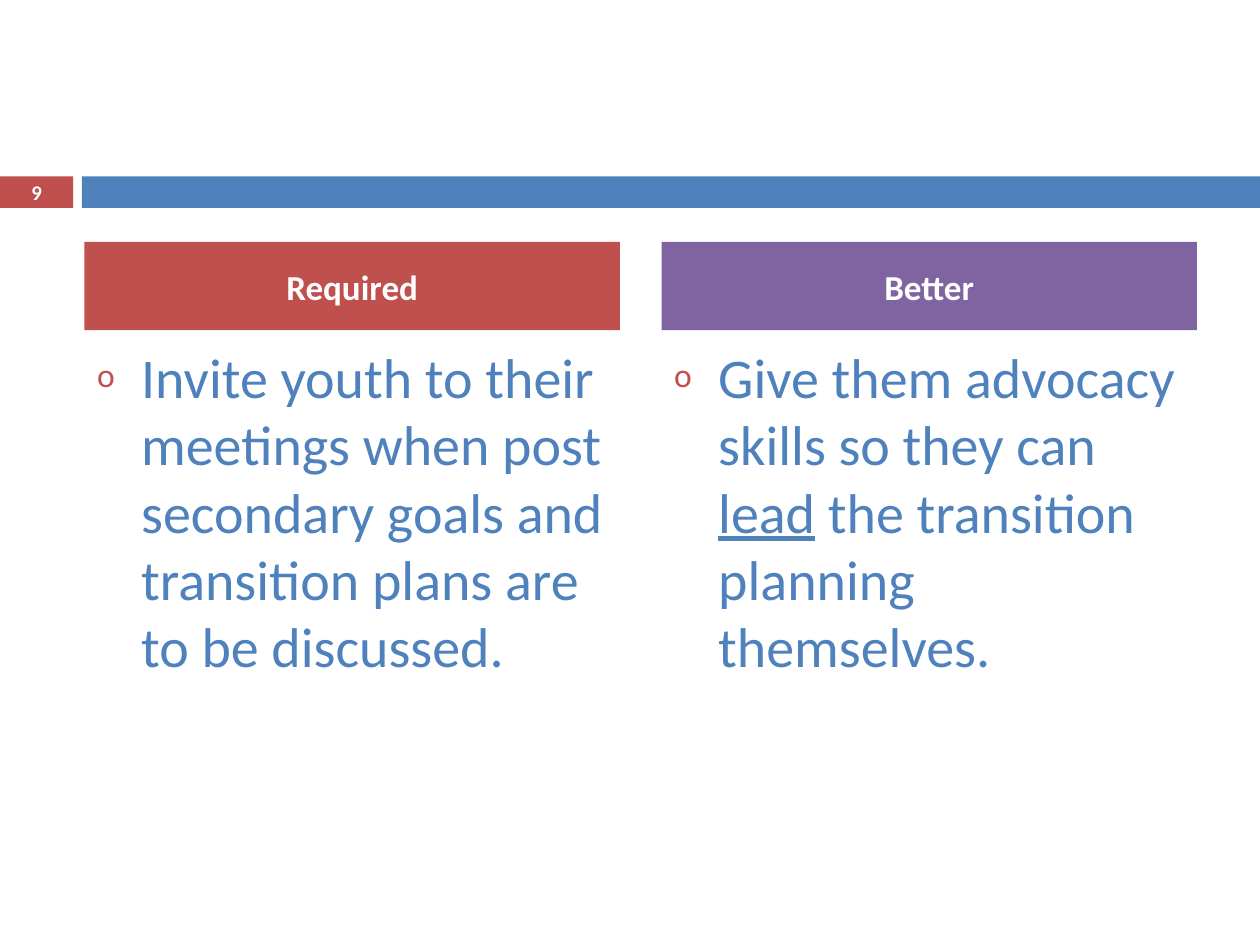
import pptx
import pptx.dml.color
import pptx.enum.shapes
import pptx.enum.text
import pptx.oxml
import pptx.oxml.ns
import pptx.util

Inches = pptx.util.Inches
Pt = pptx.util.Pt
ALIGN = pptx.enum.text.PP_ALIGN
ANCHOR = pptx.enum.text.MSO_ANCHOR

RED, BLUE, PURPLE, WHITE = "C0504D", "4F81BD", "8064A2", "FFFFFF"
SLIDE_NUMBER = "9"
COLUMNS = [
    {"heading": "Required", "fill": RED, "holders": (1, 2),
     "advice": [("Invite youth to their meetings when post secondary goals "
                 "and transition plans are to be discussed.", False)]},
    {"heading": "Better", "fill": PURPLE, "holders": (3, 4),
     "advice": [("Give them advocacy skills so they can ", False),
                ("lead", True),
                (" the transition planning themselves.", False)]},
]
BANDS = [(0, 0.58, RED), (0.65, 9.35, BLUE)]
BAND_TOP, BAND_HEIGHT = 1.4, 0.25
COLUMN_LEFT, COLUMN_STEP, COLUMN_WIDTH = 0.67, 4.58, 4.25
HEADING_TOP, HEADING_HEIGHT = 1.92, 0.7
ADVICE_TOP, ADVICE_HEIGHT = 2.67, 3.92

HEADING_FONT = {"name": "Calibri", "size": Pt(20), "bold": True}
ADVICE_FONT = {"name": "Calibri", "size": Pt(32), "bold": False}
NUMBER_FONT = {"name": "Calibri", "size": Pt(11.9), "bold": True}
CENTRED = {"alignment": ALIGN.CENTER, "space_before": Pt(7)}
BULLETED = {"alignment": ALIGN.LEFT, "space_before": Pt(7)}


def apply(target, formats):
    for attribute, value in formats.items():
        setattr(target, attribute, value)


def paint(colour_format, colour):
    colour_format.rgb = pptx.dml.color.RGBColor.from_string(colour)


def fill(shape, colour):
    shape.fill.solid()
    paint(shape.fill.fore_color, colour)


def place(shape, left, top, width, height):
    apply(shape, {"left": Inches(left), "top": Inches(top),
                  "width": Inches(width), "height": Inches(height)})


def write(shape, runs, font, colour, layout, anchor):
    apply(shape.text_frame, {"word_wrap": True, "vertical_anchor": anchor,
                             "auto_size": pptx.enum.text.MSO_AUTO_SIZE.NONE})
    paragraph = shape.text_frame.paragraphs[0]
    apply(paragraph, layout)
    for words, underline in runs:
        run = paragraph.add_run()
        run.text = words
        apply(run.font, font)
        if underline:
            run.font.underline = True
        paint(run.font.color, colour)
    return paragraph


def add_bullet(paragraph):
    properties = paragraph._p.get_or_add_pPr()
    properties.set("marL", str(Inches(0.35)))
    properties.set("indent", str(Inches(-0.35)))
    namespace = pptx.oxml.ns.nsdecls("a")
    for xml in (f'<a:buClr {namespace}><a:srgbClr val="{RED}"/></a:buClr>',
                f'<a:buSzPct {namespace} val="60000"/>',
                f'<a:buFont {namespace} typeface="Calibri"/>',
                f'<a:buChar {namespace} char="o"/>'):
        properties.append(pptx.oxml.parse_xml(xml))


def main():
    deck = pptx.Presentation()
    apply(deck, {"slide_width": Inches(10), "slide_height": Inches(7.5)})
    slide = deck.slides.add_slide(deck.slide_layouts.get_by_name("Comparison"))
    title = slide.shapes.title
    title.element.getparent().remove(title.element)

    for left, width, colour in BANDS:
        band = slide.shapes.add_shape(
            pptx.enum.shapes.MSO_SHAPE.RECTANGLE, Inches(left),
            Inches(BAND_TOP), Inches(width), Inches(BAND_HEIGHT))
        band.shadow.inherit = False
        band.line.fill.background()
        fill(band, colour)

    holders = {holder.placeholder_format.idx: holder
               for holder in slide.placeholders}
    for position, column in enumerate(COLUMNS):
        left = COLUMN_LEFT + position * COLUMN_STEP
        heading, advice = (holders[index] for index in column["holders"])
        place(heading, left, HEADING_TOP, COLUMN_WIDTH, HEADING_HEIGHT)
        fill(heading, column["fill"])
        write(heading, [(column["heading"], False)], HEADING_FONT, WHITE,
              CENTRED, ANCHOR.MIDDLE)
        place(advice, left, ADVICE_TOP, COLUMN_WIDTH, ADVICE_HEIGHT)
        add_bullet(write(advice, column["advice"], ADVICE_FONT, BLUE,
                         BULLETED, ANCHOR.TOP))

    number = slide.shapes.add_textbox(
        Inches(0), Inches(1.39), Inches(0.58), Inches(0.27))
    write(number, [(SLIDE_NUMBER, False)], NUMBER_FONT, WHITE,
          {"alignment": ALIGN.CENTER}, ANCHOR.MIDDLE)
    deck.save("out.pptx")


if __name__ == "__main__":
    main()
